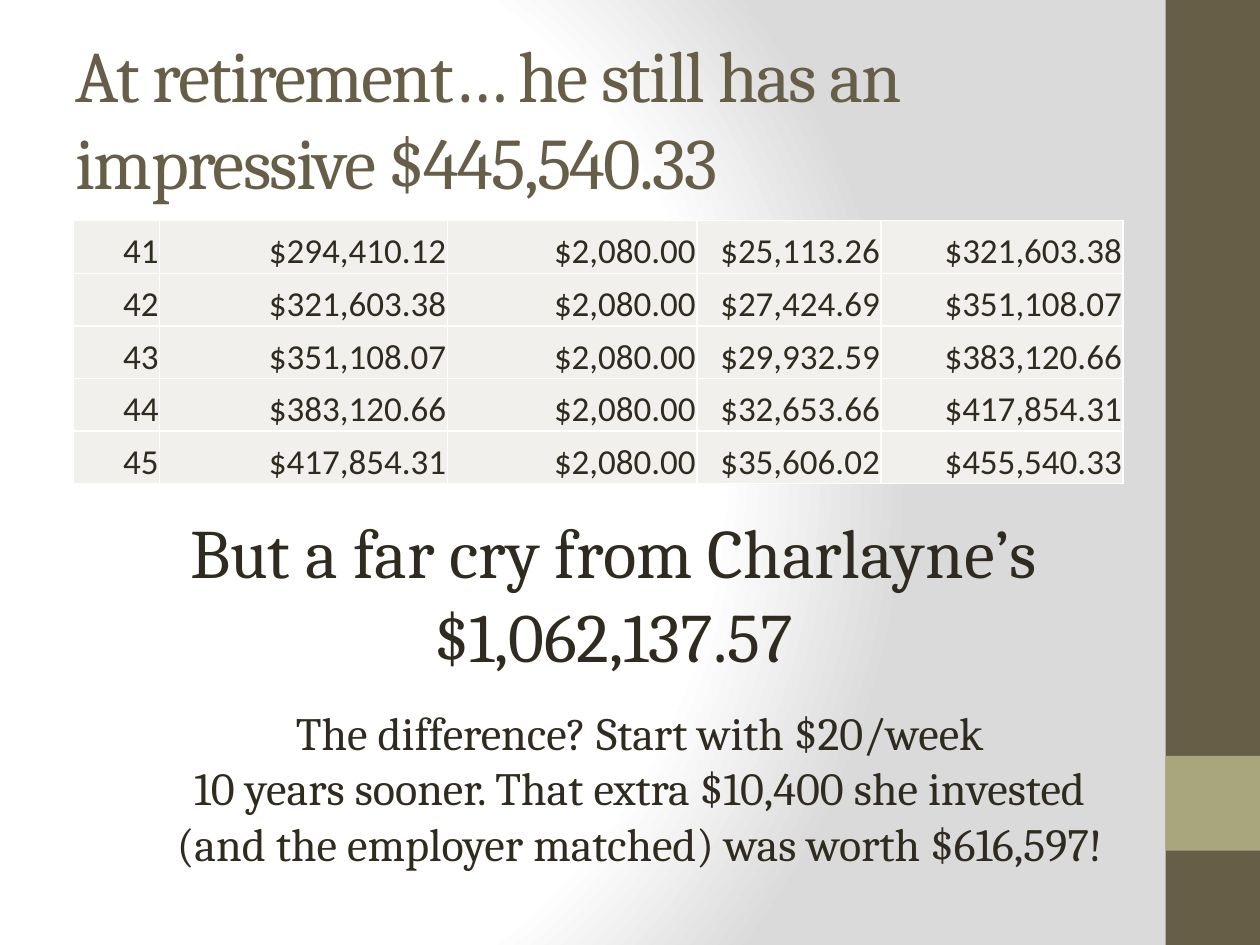
from pptx import Presentation
from pptx.dml.color import RGBColor
from pptx.enum.shapes import MSO_SHAPE
from pptx.enum.text import MSO_ANCHOR, MSO_AUTO_SIZE, PP_ALIGN
from pptx.oxml import parse_xml
from pptx.oxml.ns import nsdecls
from pptx.util import Cm, Pt

COLORS = {
    "brown": "675E47",
    "olive": "A9A57C",
    "text": "2F2B20",
    "cell": "F1F0EC",
    "white": "FFFFFF",
    "gray": "DADADA",
}


def set_values(target, values):
    for name, value in values.items():
        setattr(target, name, value)


def format_text(text_frame, frame_values, alignment, font_name, size, color):
    set_values(text_frame, frame_values)
    for paragraph in text_frame.paragraphs:
        paragraph.alignment = alignment
        for run in paragraph.runs:
            set_values(run.font, {"name": font_name, "size": Pt(size)})
            run.font.color.rgb = RGBColor.from_string(COLORS[color])


presentation = Presentation()
set_values(presentation, {"slide_width": Cm(25.4), "slide_height": Cm(19.05)})
slide = presentation.slides.add_slide(presentation.slide_layouts[5])

# Background gradient
stops = "".join(
    f'<a:gs pos="{position * 1000}"><a:srgbClr val="{COLORS[color]}"/></a:gs>'
    for position, color in [(0, "white"), (75, "white"), (100, "gray")]
)
background = parse_xml(
    f'<p:bg {nsdecls("p", "a")}><p:bgPr><a:gradFill rotWithShape="1">'
    f'<a:gsLst>{stops}</a:gsLst><a:path path="circle">'
    '<a:fillToRect l="20000" t="50000" r="100000" b="50000"/></a:path>'
    '</a:gradFill><a:effectLst/></p:bgPr></p:bg>'
)
slide.element.cSld.insert(0, background)

# Side band and its accent square
for top, height, color in [(0, 19.05, "brown"), (15.24, 1.91, "olive")]:
    band = slide.shapes.add_shape(
        MSO_SHAPE.RECTANGLE, Cm(23.5), Cm(top), Cm(1.9), Cm(height)
    )
    band.shadow.inherit = False
    band.fill.solid()
    band.fill.fore_color.rgb = RGBColor.from_string(COLORS[color])
    band.line.fill.background()

# Title
text_values = {
    "word_wrap": True,
    "auto_size": MSO_AUTO_SIZE.NONE,
    "vertical_anchor": MSO_ANCHOR.MIDDLE,
}
title = slide.shapes.title
set_values(title, {"left": Cm(1.27), "top": Cm(0.76),
                   "width": Cm(21.16), "height": Cm(3.18)})
title.text_frame.text = "At retirement… he still has an\vimpressive $445,540.33"
format_text(title.text_frame, text_values, PP_ALIGN.LEFT, "Cambria", 41.4, "brown")
for run in title.text_frame.paragraphs[0].runs:
    run.font._element.set("spc", "-100")

# Comparison texts
messages = [
    (0.94, 10.36, 3.18, 39.6, ["But a far cry from Charlayne’s", "$1,062,137.57"]),
    (1.47, 13.97, 3.81, 26.4, [
        "The difference? Start with $20/week",
        "10 years sooner. That extra $10,400 she invested",
        "(and the employer matched) was worth $616,597!",
    ]),
]
for left, top, height, size, lines in messages:
    message = slide.shapes.add_textbox(Cm(left), Cm(top), Cm(22.86), Cm(height))
    message.text_frame.text = "\n".join(lines)
    format_text(message.text_frame, text_values, PP_ALIGN.CENTER, "Cambria", size, "text")

# Savings table: year, opening balance, deposit, growth, closing balance
growth_and_closing = [
    ("$25,113.26", "$321,603.38"),
    ("$27,424.69", "$351,108.07"),
    ("$29,932.59", "$383,120.66"),
    ("$32,653.66", "$417,854.31"),
    ("$35,606.02", "$455,540.33"),
]
column_widths = [1.74, 5.8, 5.03, 3.71, 4.88]
row_height = 1.06
row_count = len(growth_and_closing)
table = slide.shapes.add_table(
    row_count, len(column_widths), Cm(1.48), Cm(4.45),
    Cm(sum(column_widths)), Cm(row_height * row_count)
).table
set_values(table, {"first_row": False, "horz_banding": False})
for column, width in zip(table.columns, column_widths):
    column.width = Cm(width)

cell_values = {
    "vertical_anchor": MSO_ANCHOR.BOTTOM,
    "margin_left": Cm(0.02),
    "margin_right": Cm(0.02),
    "margin_top": Cm(0.02),
    "margin_bottom": 0,
}
opening = "$294,410.12"
for row_index, (growth, closing) in enumerate(growth_and_closing):
    table.rows[row_index].height = Cm(row_height)
    values = [str(41 + row_index), opening, "$2,080.00", growth, closing]
    for cell, value in zip(table.rows[row_index].cells, values):
        cell.text = value
        set_values(cell, cell_values)
        format_text(cell.text_frame, {}, PP_ALIGN.RIGHT, "Calibri", 20, "text")
        cell.fill.solid()
        cell.fill.fore_color.rgb = RGBColor.from_string(COLORS["cell"])
        # Borders come before the fill in the cell properties
        properties = cell._tc.get_or_add_tcPr()
        for position, side in enumerate(["lnL", "lnR", "lnT", "lnB"]):
            properties.insert(position, parse_xml(
                f'<a:{side} {nsdecls("a")} w="12700"><a:solidFill>'
                f'<a:srgbClr val="{COLORS["white"]}"/></a:solidFill></a:{side}>'
            ))
    opening = closing

presentation.save("out.pptx")
